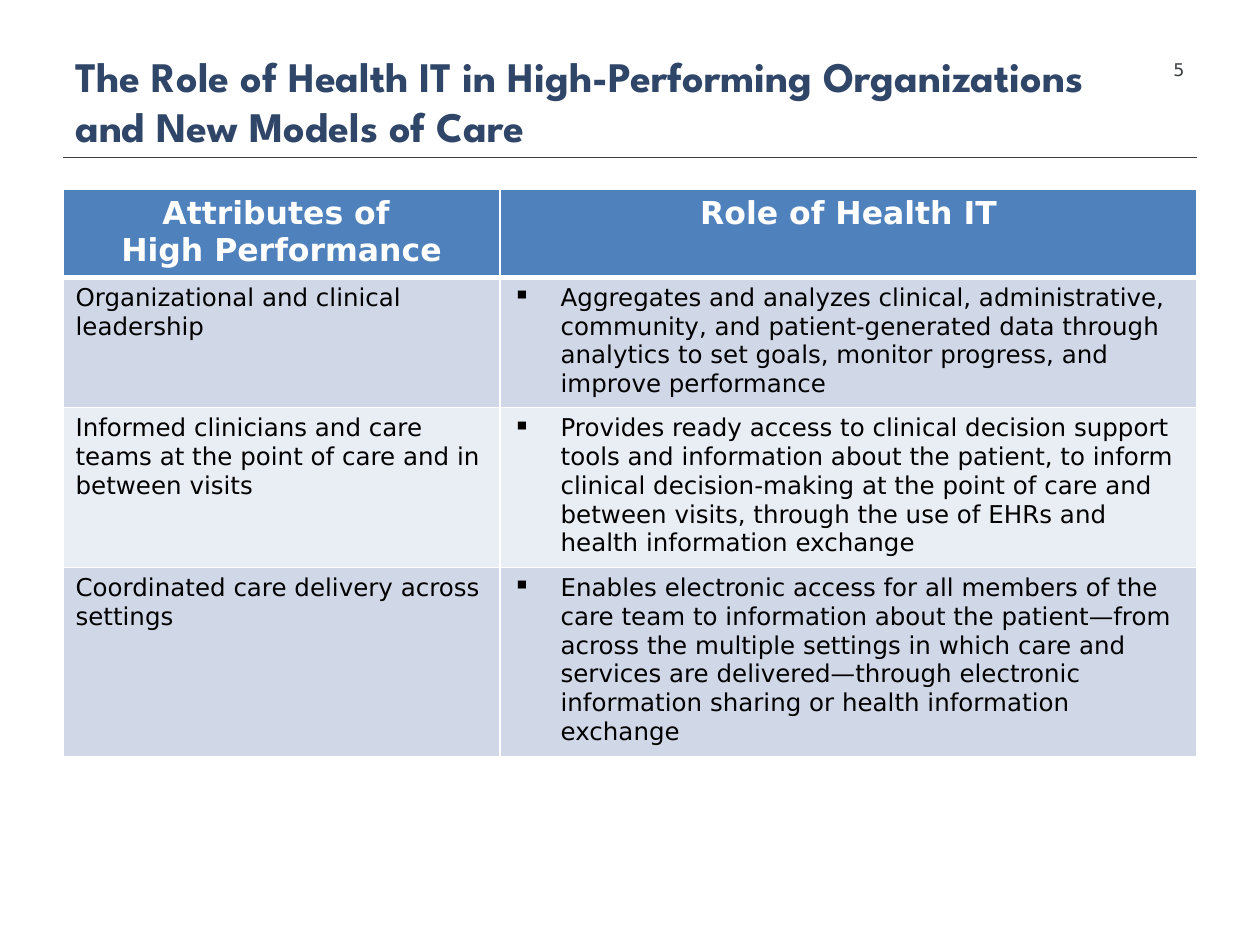
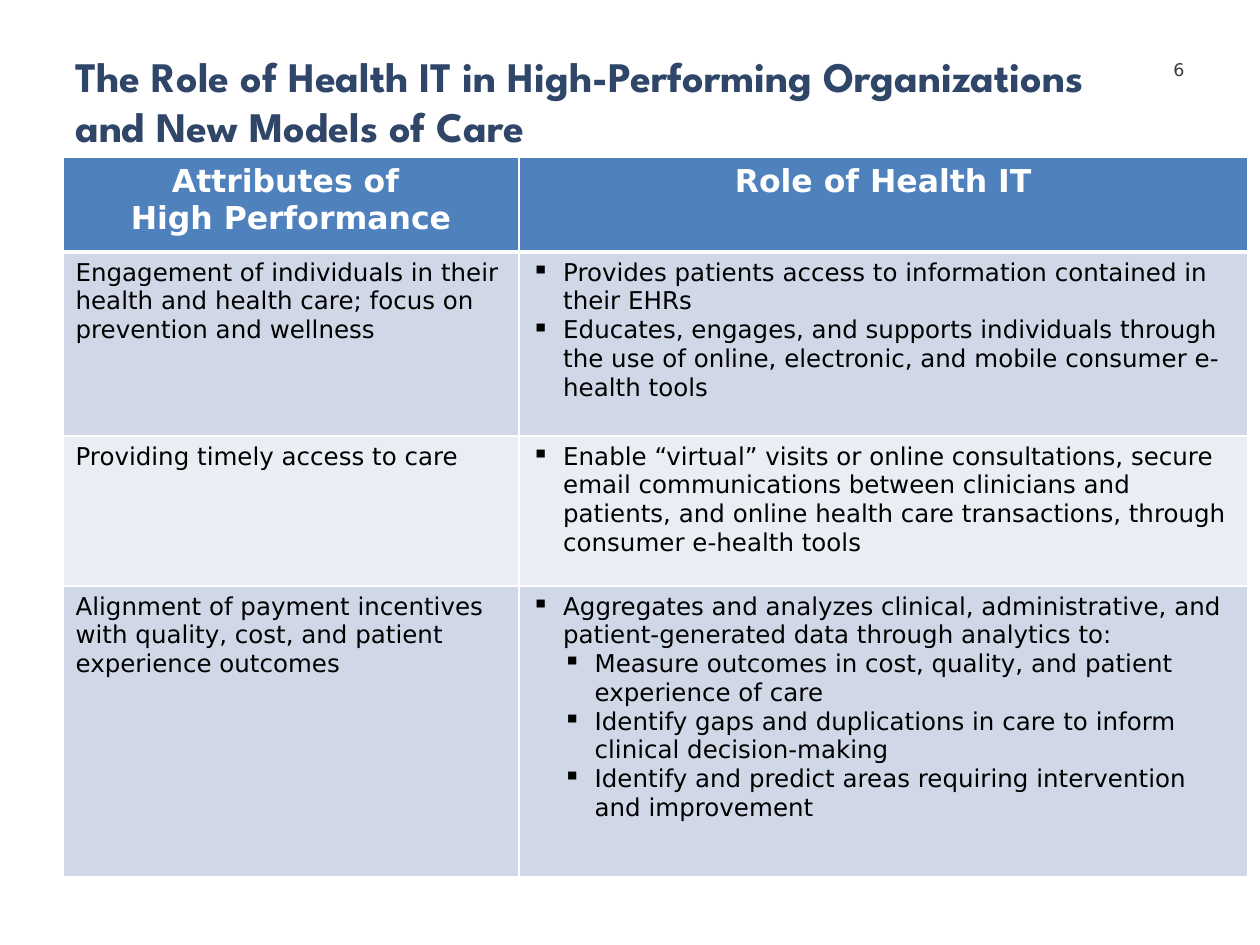
"""Build two slides on the role of health IT in high-performing organizations."""
import dataclasses

import pptx
import pptx.dml.color
import pptx.enum.shapes
import pptx.enum.text
import pptx.oxml
import pptx.oxml.ns
import pptx.util

Inches = pptx.util.Inches
Pt = pptx.util.Pt
Align = pptx.enum.text.PP_ALIGN
Anchor = pptx.enum.text.MSO_ANCHOR
NAMESPACE = pptx.oxml.ns.nsdecls("a")


@dataclasses.dataclass(frozen=True)
class Theme:
    title_font: str = "League Spartan"
    body_font: str = "DejaVu Sans"
    title_color: str = "304668"
    rule_color: str = "3B3D3F"
    header_fill: str = "4F81BD"
    band_fills: tuple = ("D0D8E8", "E9EDF4")
    white: str = "FFFFFF"
    black: str = "000000"
    title_size: int = 24
    header_size: int = 18
    body_size: int = 14
    number_size: int = 10
    thin: int = 1
    thick: int = 3


THEME = Theme()
FORMATS = {
    "title": {"name": THEME.title_font, "size": Pt(THEME.title_size), "bold": True},
    "number": {"name": THEME.body_font, "size": Pt(THEME.number_size), "bold": False},
    "header": {"name": THEME.body_font, "size": Pt(THEME.header_size), "bold": True},
    "body": {"name": THEME.body_font, "size": Pt(THEME.body_size), "bold": False},
}
COLORS = {
    "title": THEME.title_color,
    "number": THEME.rule_color,
    "header": THEME.white,
    "body": THEME.black,
}


def rgb(color):
    return pptx.dml.color.RGBColor.from_string(color)


class Deck:
    def __init__(self, presentation):
        self.presentation = presentation
        self.slide = None

    def add_slide(self, title, number):
        layout = self.presentation.slide_layouts[6]
        self.slide = self.presentation.slides.add_slide(layout)
        self.add_rule(0.5, 9.5, 1.25)
        self.add_text(title, "title", 0.5, 0.35, 8.44, 0.9)
        self.add_text(str(number), "number", 8.94, 0.35, 0.56, 0.4, Align.RIGHT)

    def add_rule(self, left, right, y):
        rule = self.slide.shapes.add_connector(
            pptx.enum.shapes.MSO_CONNECTOR.STRAIGHT,
            Inches(left), Inches(y), Inches(right), Inches(y))
        rule.line.color.rgb = rgb(THEME.rule_color)
        rule.line.width = Pt(THEME.thin)
        rule._element.spPr.append(pptx.oxml.parse_xml(f"<a:effectLst {NAMESPACE}/>"))

    def add_text(self, text, style, left, top, width, height, alignment=Align.LEFT):
        box = self.slide.shapes.add_textbox(
            Inches(left), Inches(top), Inches(width), Inches(height))
        frame = box.text_frame
        frame.word_wrap = True
        frame.vertical_anchor = Anchor.MIDDLE
        self.set_paragraph(frame.paragraphs[0], text, style, alignment)

    def set_paragraph(self, paragraph, text, style, alignment=Align.LEFT):
        paragraph.alignment = alignment
        run = paragraph.add_run()
        run.text = text
        for attribute, value in FORMATS[style].items():
            setattr(run.font, attribute, value)
        run.font.color.rgb = rgb(COLORS[style])

    def add_bullet(self, paragraph, indent, level):
        paragraph.level = level
        properties = paragraph._p.get_or_add_pPr()
        properties.set("marL", str(Inches(indent * (level + 1))))
        properties.set("indent", str(-Inches(indent)))
        properties.append(pptx.oxml.parse_xml(f'<a:buChar {NAMESPACE} char="▪"/>'))

    def add_borders(self, cell, row_index):
        widths = {"L": THEME.thin, "R": THEME.thin,
                  "T": THEME.thick if row_index == 1 else THEME.thin,
                  "B": THEME.thick if row_index == 0 else THEME.thin}
        properties = cell._tc.get_or_add_tcPr()
        for side, width in widths.items():
            properties.append(pptx.oxml.parse_xml(
                f'<a:ln{side} {NAMESPACE} w="{Pt(width)}"><a:solidFill>'
                f'<a:srgbClr val="{THEME.white}"/></a:solidFill></a:ln{side}>'))

    def fill_cell(self, cell, row_index, lines, indent=None):
        self.add_borders(cell, row_index)
        header = row_index == 0
        cell.fill.solid()
        cell.fill.fore_color.rgb = rgb(
            THEME.header_fill if header else THEME.band_fills[(row_index - 1) % 2])
        frame = cell.text_frame
        for index, (text, level) in enumerate(lines):
            paragraph = frame.add_paragraph() if index else frame.paragraphs[0]
            if indent:
                self.add_bullet(paragraph, indent, level)
            self.set_paragraph(paragraph, text, "header" if header else "body",
                               Align.CENTER if header else Align.LEFT)

    def add_table(self, top, column_widths, row_heights, indent, entries):
        frame = self.slide.shapes.add_table(
            len(row_heights), len(column_widths), Inches(0.5), Inches(top),
            Inches(sum(column_widths)), Inches(sum(row_heights)))
        table = frame.table
        table.first_row = table.horz_banding = False
        for column, width in zip(table.columns, column_widths):
            column.width = Inches(width)
        for row, height in zip(table.rows, row_heights):
            row.height = Inches(height)
        for column_index, lines in enumerate(HEADERS):
            self.fill_cell(table.cell(0, column_index), 0, lines)
        for row_index, (attribute, roles) in enumerate(entries, 1):
            self.fill_cell(table.cell(row_index, 0), row_index, [(attribute, 0)])
            self.fill_cell(table.cell(row_index, 1), row_index, roles, indent)


TITLE = "The Role of Health IT in High-Performing Organizations and New Models of Care"
HEADERS = [
    [("Attributes of ", 0), ("High Performance", 0)],
    [("Role of Health IT", 0)],
]
CARE_DELIVERY = [
    ("Organizational and clinical leadership", [
        ("Aggregates and analyzes clinical, administrative, community, and "
         "patient-generated data through analytics to set goals, monitor progress, "
         "and improve performance", 0)]),
    ("Informed clinicians and care teams at the point of care and in between visits", [
        ("Provides ready access to clinical decision support tools and information "
         "about the patient, to inform clinical decision-making at the point of care "
         "and between visits, through the use of EHRs and health information "
         "exchange", 0)]),
    ("Coordinated care delivery across settings", [
        ("Enables electronic access for all members of the care team to information "
         "about the patient—from across the multiple settings in which care and "
         "services are delivered—through electronic information sharing or health "
         "information exchange", 0)]),
]
PATIENT_ENGAGEMENT = [
    ("Engagement of individuals in their health and health care; focus on prevention "
     "and wellness", [
         ("Provides patients access to information contained in their EHRs", 0),
         ("Educates, engages, and supports individuals through the use of online, "
          "electronic, and mobile consumer e-health tools", 0)]),
    ("Providing timely access to care", [
        ("Enable “virtual” visits or online consultations, secure email "
         "communications between clinicians and patients, and online health care "
         "transactions, through consumer e-health tools", 0)]),
    ("Alignment of payment incentives with quality, cost, and patient experience "
     "outcomes", [
         ("Aggregates and analyzes clinical, administrative, and patient-generated "
          "data through analytics to:", 0),
         ("Measure outcomes in cost, quality, and patient experience of care", 1),
         ("Identify gaps and duplications in care to inform clinical "
          "decision-making", 1),
         ("Identify and predict areas requiring intervention and improvement", 1)]),
]


def main():
    presentation = pptx.Presentation()
    presentation.slide_width = Inches(10)
    presentation.slide_height = Inches(7.5)
    deck = Deck(presentation)
    deck.add_slide(TITLE, 5)
    deck.add_table(1.5, (3.47, 5.53), (0.67, 1.01, 1.24, 1.47), 0.38, CARE_DELIVERY)
    deck.add_slide(TITLE, 6)
    deck.add_table(1.25, (3.62, 5.78), (0.75, 1.46, 1.19, 2.31), 0.25,
                   PATIENT_ENGAGEMENT)
    presentation.save("out.pptx")


if __name__ == "__main__":
    main()
